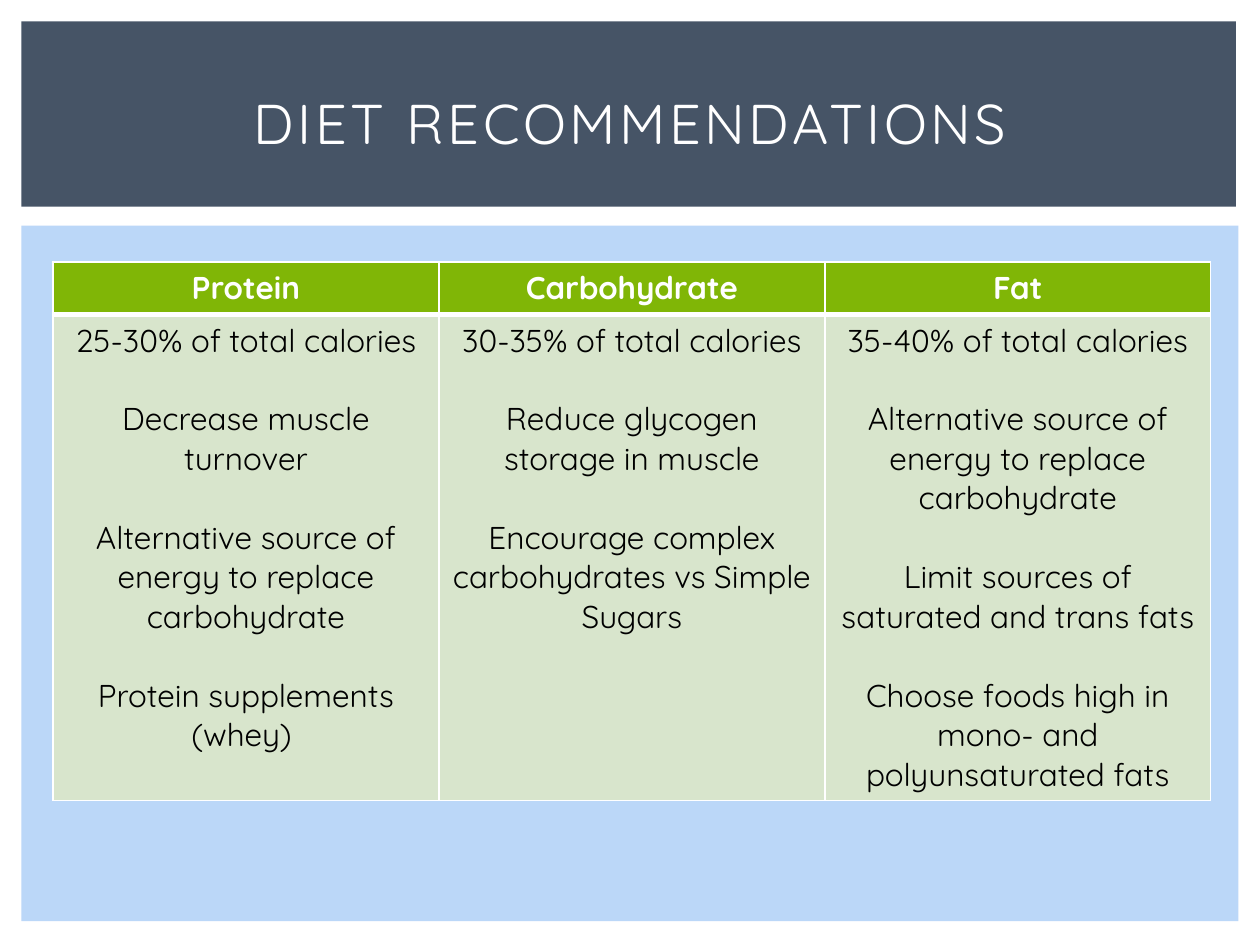
from lxml.etree import SubElement
from pptx import Presentation
from pptx.dml.color import RGBColor
from pptx.enum.shapes import MSO_SHAPE
from pptx.enum.text import MSO_ANCHOR, PP_ALIGN
from pptx.oxml.ns import qn
from pptx.util import Inches, Pt

WHITE = RGBColor(0xFF, 0xFF, 0xFF)
BLACK = RGBColor(0x00, 0x00, 0x00)
SLATE = RGBColor(0x46, 0x54, 0x66)
SKY = RGBColor(0xBB, 0xD7, 0xF8)
GREEN = RGBColor(0x80, 0xB6, 0x06)
PALE_GREEN = RGBColor(0xD8, 0xE5, 0xCC)

FONT = "Quicksand"
TABLE_SIZE = 18
LINE_HEIGHT = 1.25 * TABLE_SIZE  # one line of the table text, in points

SLIDE_W, SLIDE_H = 10, 7.5
MARGIN = 0.17
CONTENT_LEFT = 0.42
TABLE_TOP, TABLE_WIDTH = 2.08, 9.19
HEADER_HEIGHT, BODY_HEIGHT = 0.41, 3.86

NUTRIENTS = {
    "Protein": [
        "25-30% of total calories",
        "Decrease muscle turnover",
        "Alternative source of energy to replace carbohydrate",
        "Protein supplements (whey) ",
    ],
    "Carbohydrate": [
        "30-35% of total calories",
        "Reduce glycogen storage in muscle",
        "Encourage complex carbohydrates vs Simple Sugars",
    ],
    "Fat": [
        "35-40% of total calories",
        "Alternative source of energy to replace carbohydrate",
        "Limit sources of saturated and trans fats",
        "Choose foods high in mono- and polyunsaturated fats",
    ],
}


def add_panel(slide, left, top, width, height, color):
    panel = slide.shapes.add_shape(
        MSO_SHAPE.RECTANGLE, *map(Inches, (left, top, width, height)))
    panel.shadow.inherit = False
    panel.fill.solid()
    panel.fill.fore_color.rgb = color
    panel.line.fill.background()


def style_text(text_frame, size, color, bold=False):
    for paragraph in text_frame.paragraphs:
        paragraph.alignment = PP_ALIGN.CENTER
        for run in paragraph.runs:
            run.font.name = FONT
            run.font.size = Pt(size)
            run.font.bold = bold
            run.font.color.rgb = color


def set_title(slide, text):
    title = slide.shapes.title
    title.left, title.top = Inches(CONTENT_LEFT), Inches(0.39)
    title.width, title.height = Inches(9.17), Inches(1.15)
    frame = title.text_frame
    frame.text = text
    frame.vertical_anchor = MSO_ANCHOR.MIDDLE
    style_text(frame, 32, WHITE)
    # Letter spacing, in hundredths of a point
    frame.paragraphs[0].runs[0].font._element.set("spc", "200")
    # Bring the title in front of the panels
    slide.shapes._spTree.append(title._element)


def set_borders(cell, bottom_width):
    widths = {"L": 1, "R": 1, "T": 1, "B": bottom_width}
    properties = cell._tc.get_or_add_tcPr()
    for side, width in widths.items():
        line = SubElement(properties, qn(f"a:ln{side}"), w=str(Pt(width)))
        fill = SubElement(line, qn("a:solidFill"))
        SubElement(fill, qn("a:srgbClr"), val=str(WHITE))


def fill_cell(cell, lines, fill_color, text_color, bold=False, bottom_width=1):
    set_borders(cell, bottom_width)
    cell.fill.solid()
    cell.fill.fore_color.rgb = fill_color
    cell.text_frame.text = "\n".join(lines)
    style_text(cell.text_frame, TABLE_SIZE, text_color, bold)
    for paragraph in cell.text_frame.paragraphs[1:]:
        paragraph.space_before = Pt(LINE_HEIGHT)


def add_diet_table(slide):
    table = slide.shapes.add_table(
        2, len(NUTRIENTS), Inches(CONTENT_LEFT), Inches(TABLE_TOP),
        Inches(TABLE_WIDTH), Inches(HEADER_HEIGHT + BODY_HEIGHT)).table
    table.rows[0].height = Inches(HEADER_HEIGHT)
    table.rows[1].height = Inches(BODY_HEIGHT)
    for column, (nutrient, advice) in enumerate(NUTRIENTS.items()):
        fill_cell(table.cell(0, column), [nutrient], GREEN, WHITE,
                  bold=True, bottom_width=3)
        fill_cell(table.cell(1, column), advice, PALE_GREEN, BLACK)


def main():
    presentation = Presentation()
    presentation.slide_width = Inches(SLIDE_W)
    presentation.slide_height = Inches(SLIDE_H)
    slide = presentation.slides.add_slide(presentation.slide_layouts[5])

    # Background panels
    add_panel(slide, MARGIN, 1.79, SLIDE_W - 2 * MARGIN, 5.52, SKY)
    add_panel(slide, MARGIN, MARGIN, 9.64, 1.47, SLATE)

    # Title and table
    set_title(slide, "DIET RECOMMENDATIONS")
    add_diet_table(slide)

    presentation.save("out.pptx")


if __name__ == "__main__":
    main()
